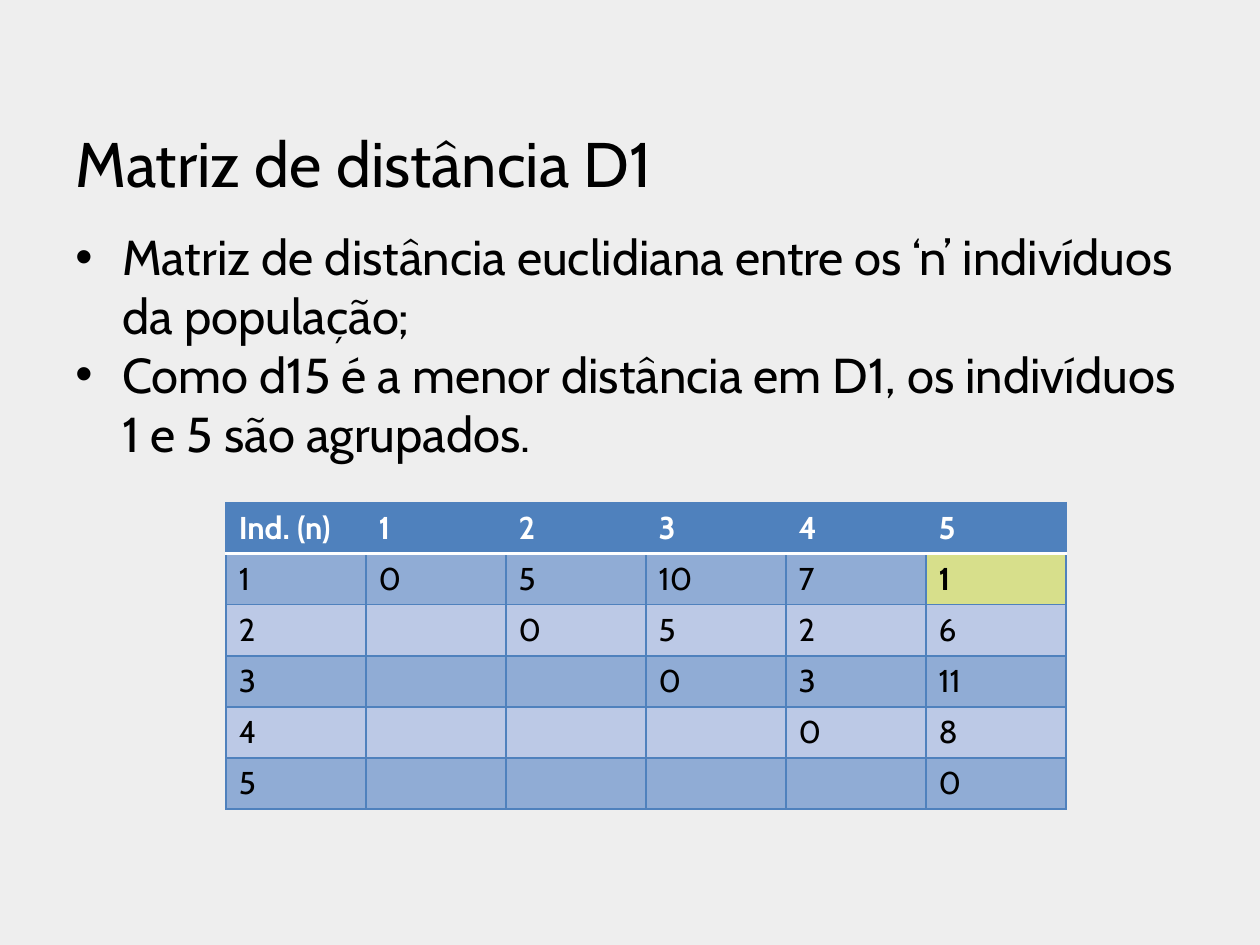
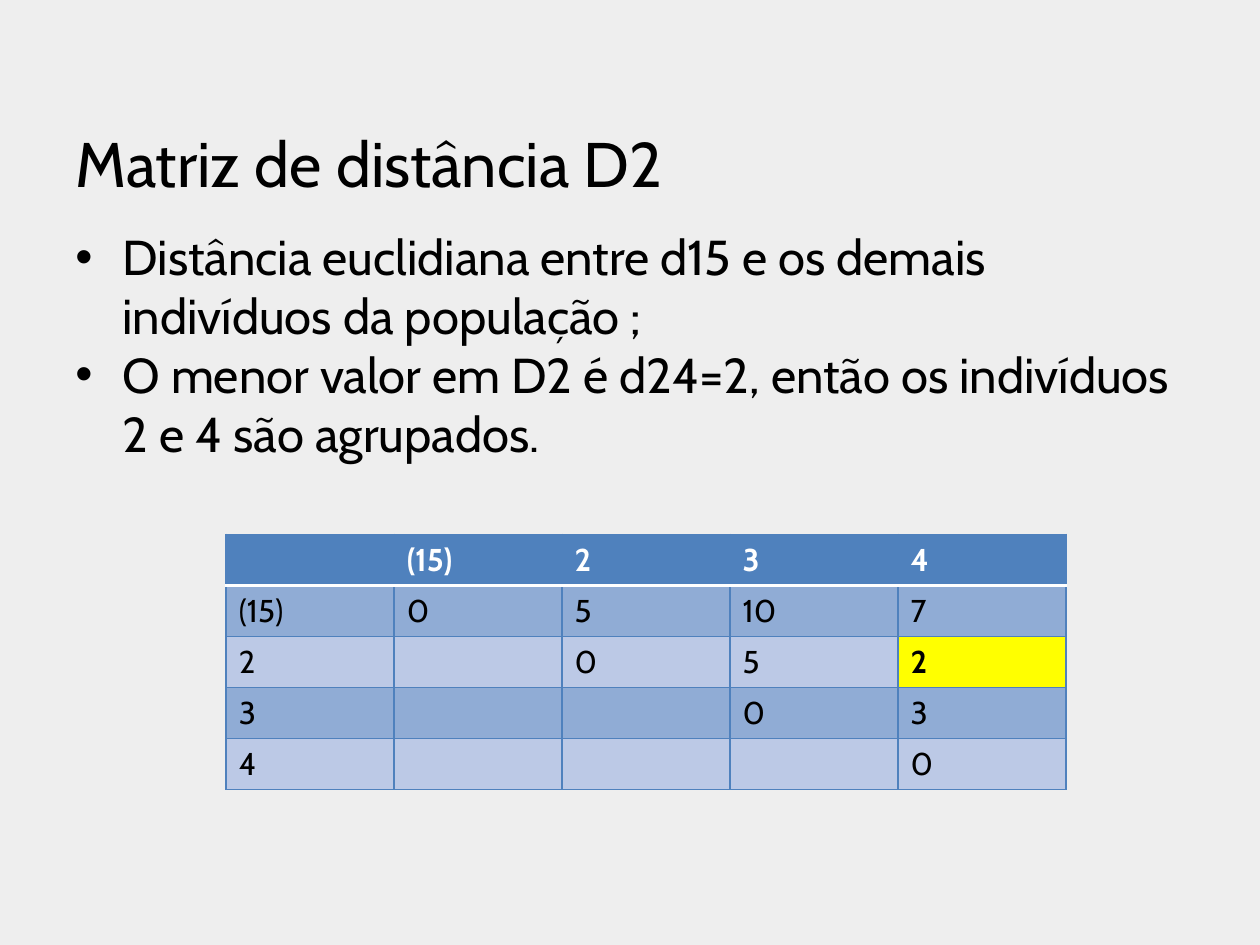
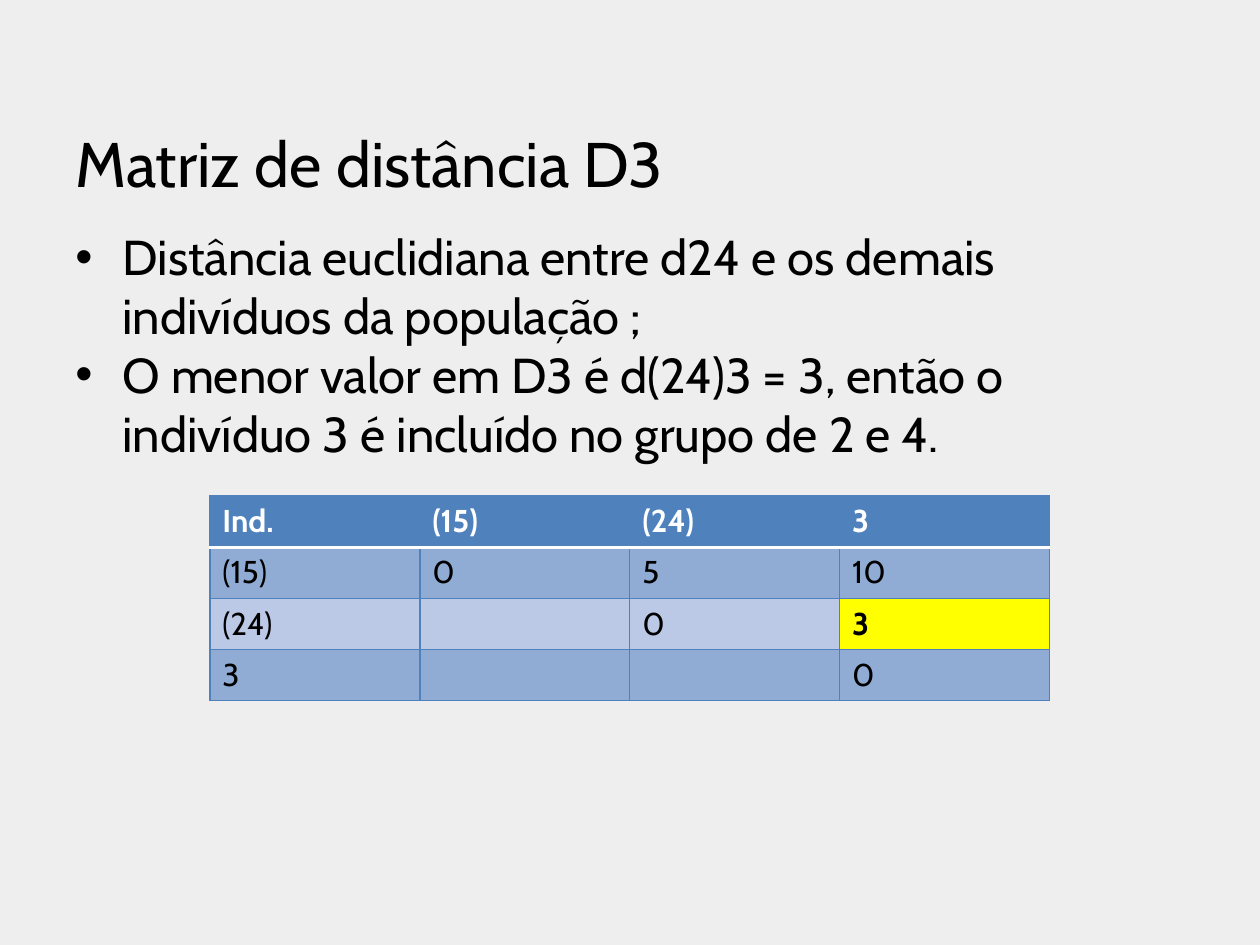
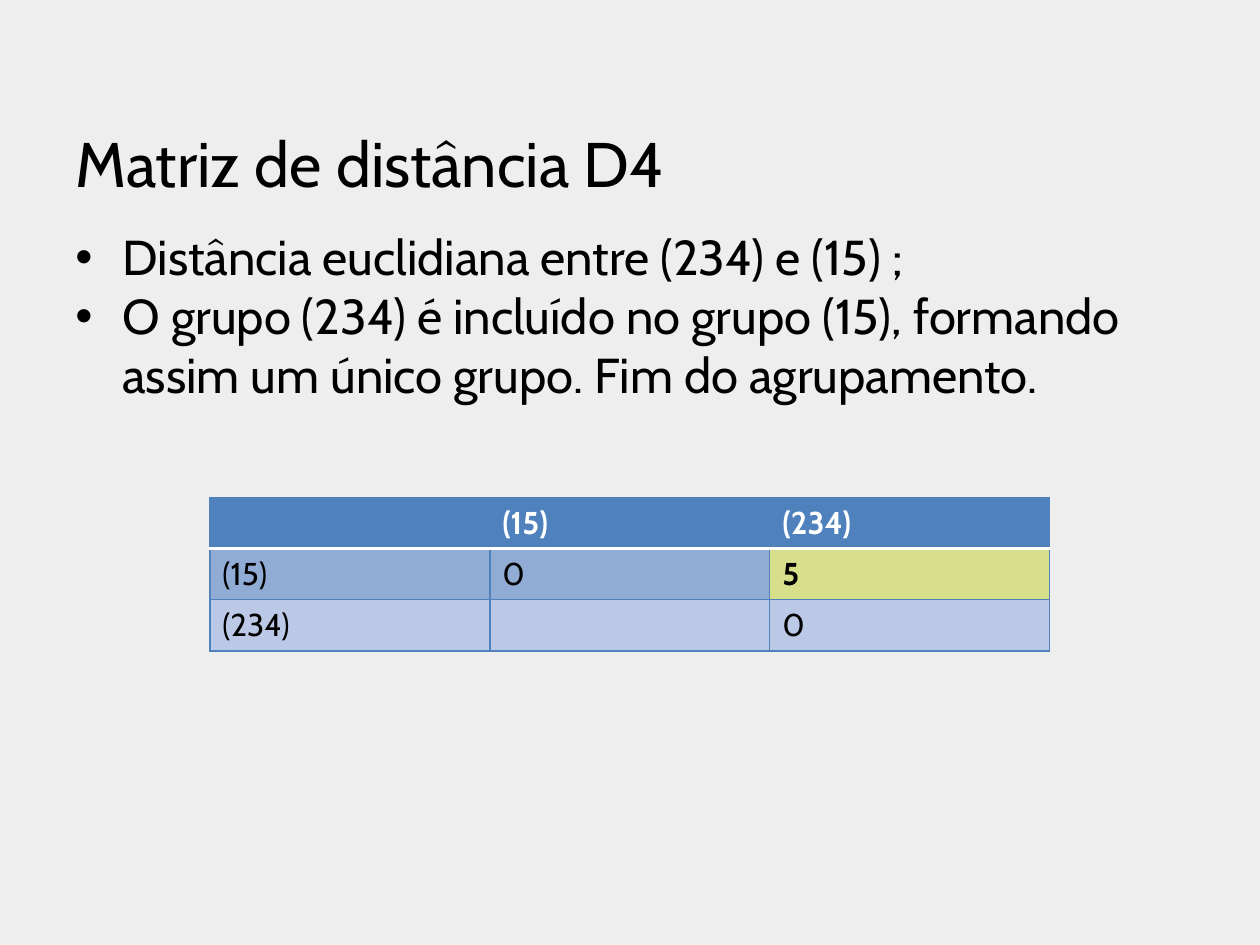
"""Build four slides that follow a hierarchical clustering through its distance matrices."""
from lxml.etree import SubElement
from pptx import Presentation
from pptx.dml.color import RGBColor
from pptx.enum.text import MSO_ANCHOR, MSO_AUTO_SIZE, PP_ALIGN
from pptx.oxml.ns import qn
from pptx.util import Cm, Pt

FONT = "Cabin"
BACKGROUND = "EEEEEE"
INK = "000000"
WHITE = "FFFFFF"
BLUE = "4F81BD"
BAND_DARK = "90ACD5"
BAND_LIGHT = "BCC9E6"
YELLOW = "FFFF00"
LIME = "D7DF8B"

MARGIN = Cm(1.27)
CONTENT_WIDTH = Cm(22.86)
INDENT = Cm(0.95)
MATRIX_WIDTH = Cm(16.93)
ROW_HEIGHT = Cm(1.03)

STEPS = [
    {
        "title": "Matriz de distância D1",
        "points": [
            "Matriz de distância euclidiana entre os ‘n’ indivíduos da população;",
            "Como d15 é a menor distância em D1, os indivíduos 1 e 5 são agrupados.",
        ],
        "corner": "Ind. (n)",
        "groups": ["1", "2", "3", "4", "5"],
        "distances": [[0, 5, 10, 7, 1], [0, 5, 2, 6], [0, 3, 11], [0, 8], [0]],
        "nearest": (1, 5),
        "highlight": LIME,
        "position": (4.56, 10.13),
    },
    {
        "title": "Matriz de distância D2",
        "points": [
            "Distância euclidiana entre d15 e os demais indivíduos da população ;",
            "O menor valor em D2 é d24=2, então os indivíduos 2 e 4 são agrupados.",
        ],
        "corner": "",
        "groups": ["(15)", "2", "3", "4"],
        "distances": [[0, 5, 10, 7], [0, 5, 2], [0, 3], [0]],
        "nearest": (2, 4),
        "highlight": YELLOW,
        "position": (4.56, 10.77),
    },
    {
        "title": "Matriz de distância D3",
        "points": [
            "Distância euclidiana entre d24 e os demais indivíduos da população ;",
            "O menor valor em D3 é d(24)3 = 3, então o indivíduo 3 é incluído no grupo de 2 e 4.",
        ],
        "corner": "Ind.",
        "groups": ["(15)", "(24)", "3"],
        "distances": [[0, 5, 10], [0, 3], [0]],
        "nearest": (2, 3),
        "highlight": YELLOW,
        "position": (4.23, 10.0),
    },
    {
        "title": "Matriz de distância D4",
        "points": [
            "Distância euclidiana entre (234) e (15) ;",
            "O grupo (234) é incluído no grupo (15), formando assim um único grupo. "
            "Fim do agrupamento.",
        ],
        "corner": "",
        "groups": ["(15)", "(234)"],
        "distances": [[0, 5], [0]],
        "nearest": (1, 2),
        "highlight": LIME,
        "position": (4.23, 10.03),
    },
]


def rgb(value):
    """Turn a hex string into a colour."""
    return RGBColor.from_string(value)


def style_runs(paragraph, size, color=INK, bold=False):
    """Format every run of a paragraph."""
    for run in paragraph.runs:
        run.font.name = FONT
        run.font.size = Pt(size)
        run.font.bold = bold
        run.font.color.rgb = rgb(color)


def add_title(slide, title):
    """Place and format the title placeholder."""
    heading = slide.shapes.title
    heading.left, heading.top = MARGIN, Cm(0.99)
    heading.width, heading.height = CONTENT_WIDTH, Cm(3.18)
    frame = heading.text_frame
    frame.text = title
    frame.vertical_anchor = MSO_ANCHOR.BOTTOM
    frame.auto_size = MSO_AUTO_SIZE.NONE
    frame.paragraphs[0].alignment = PP_ALIGN.LEFT
    style_runs(frame.paragraphs[0], 36)


def add_bullet(paragraph):
    """Give a paragraph a round bullet with a hanging indent."""
    properties = paragraph._p.get_or_add_pPr()
    properties.set("marL", str(INDENT))
    properties.set("indent", str(-INDENT))
    SubElement(properties, qn("a:buFont"), typeface="Arial")
    SubElement(properties, qn("a:buChar"), char="•")


def add_points(slide, points):
    """Add the bulleted explanation of a step."""
    box = slide.shapes.add_textbox(MARGIN, Cm(4.45), CONTENT_WIDTH, Cm(12.57))
    frame = box.text_frame
    frame.word_wrap = True
    frame.text = "\n".join(points)
    for paragraph in frame.paragraphs:
        add_bullet(paragraph)
        style_runs(paragraph, 28)


def add_border(cell, side, color, width):
    """Draw one side of a table cell."""
    line = SubElement(cell._tc.get_or_add_tcPr(), qn(f"a:ln{side}"), w=str(Pt(width)))
    fill = SubElement(line, qn("a:solidFill"))
    SubElement(fill, qn("a:srgbClr"), val=color)


def format_cell(cell, row, fill, bold):
    """Apply borders, fill and text style to a matrix cell."""
    header_edge = {0: "B", 1: "T"}.get(row)
    for side in "LRTB":
        color, width = (WHITE, 2) if side == header_edge else (BLUE, 1)
        add_border(cell, side, color, width)
    cell.fill.solid()
    cell.fill.fore_color.rgb = rgb(fill)
    style_runs(cell.text_frame.paragraphs[0], 18, INK if row else WHITE, bold)


def matrix_rows(step):
    """Return the full grid of texts, with the lower triangle empty."""
    rows = [[step["corner"], *step["groups"]]]
    for index, (group, values) in enumerate(zip(step["groups"], step["distances"])):
        rows.append([group, *[""] * index, *map(str, values)])
    return rows


def add_matrix(slide, step):
    """Add the distance matrix and mark its smallest distance."""
    rows = matrix_rows(step)
    size = len(rows)
    left, top = map(Cm, step["position"])
    matrix = slide.shapes.add_table(
        size, size, left, top, MATRIX_WIDTH, ROW_HEIGHT * size
    ).table
    matrix.horz_banding = False
    for row, texts in enumerate(rows):
        band = BLUE if row == 0 else (BAND_LIGHT, BAND_DARK)[row % 2]
        for column, text in enumerate(texts):
            cell = matrix.cell(row, column)
            cell.text_frame.text = text
            nearest = (row, column) == step["nearest"]
            fill = step["highlight"] if nearest else band
            format_cell(cell, row, fill, nearest or row == 0)


def main():
    """Build and save the presentation."""
    presentation = Presentation()
    presentation.slide_width, presentation.slide_height = Cm(25.4), Cm(19.05)
    backdrop = presentation.slide_master.background.fill
    backdrop.solid()
    backdrop.fore_color.rgb = rgb(BACKGROUND)
    title_only = presentation.slide_layouts.get_by_name("Title Only")
    for step in STEPS:
        slide = presentation.slides.add_slide(title_only)
        add_title(slide, step["title"])
        add_points(slide, step["points"])
        add_matrix(slide, step)
    presentation.save("out.pptx")


if __name__ == "__main__":
    main()
